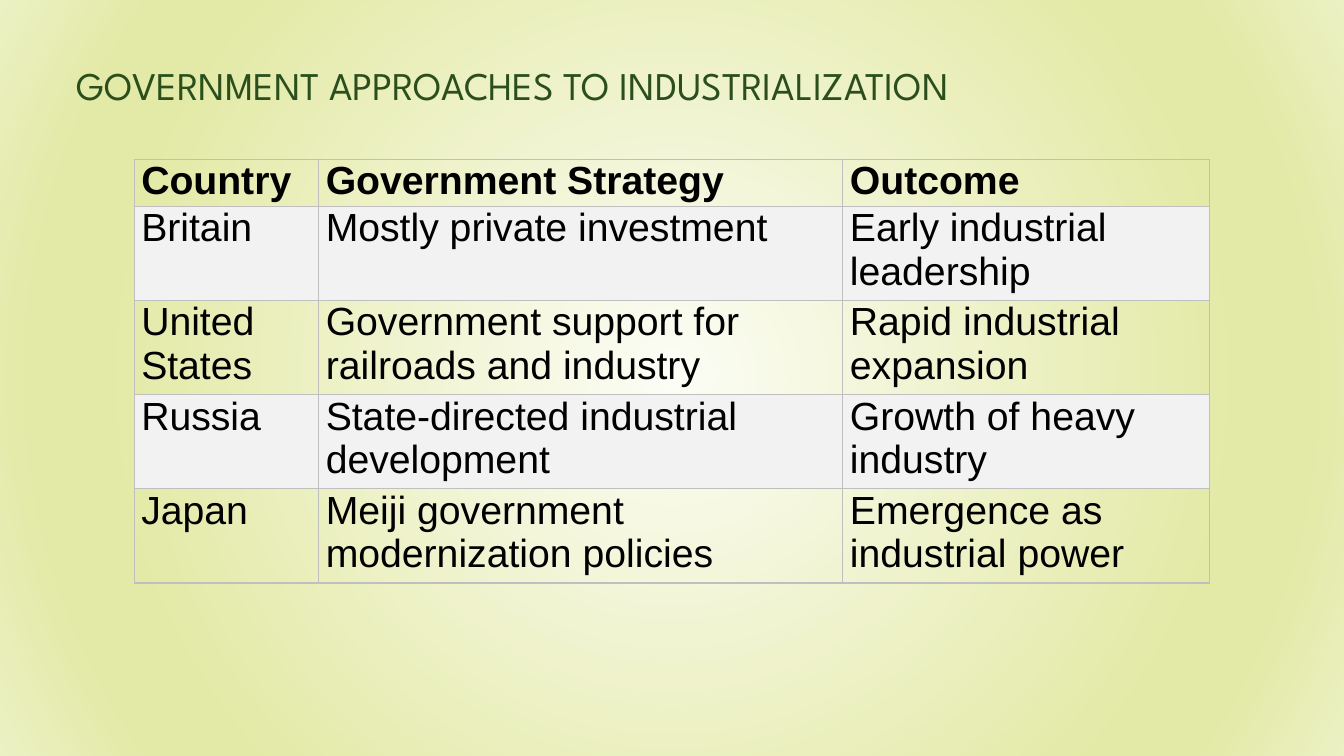
from lxml import etree
from pptx import Presentation
from pptx.dml.color import RGBColor
from pptx.enum.text import MSO_ANCHOR
from pptx.oxml import parse_xml
from pptx.oxml.ns import nsdecls, qn
from pptx.util import Cm, Pt

BOTTOM = MSO_ANCHOR.BOTTOM
BACKGROUND_STOPS = [(0, "FCFDF5"), (74, "E3E9A6"), (83, "E3E9A6"), (100, "ECF1C4")]
BORDER_COLOR = "BFBFBF"
BAND_COLOR = "F2F2F2"
COLUMN_SHARES = [4.65, 13.21, 9.25]
LINE_HEIGHT = 1.1
ROWS = [
    ("Country", "Government Strategy", "Outcome"),
    ("Britain", "Mostly private investment", "Early industrial leadership"),
    ("United States", "Government support for railroads and industry", "Rapid industrial expansion"),
    ("Russia", "State-directed industrial development", "Growth of heavy industry"),
    ("Japan", "Meiji government modernization policies", "Emergence as industrial power"),
]


def color(value):
    return RGBColor.from_string(value)


def add_run(paragraph, text, font_name, font_color, bold=False):
    run = paragraph.add_run()
    run.text = text
    run.font.name = font_name
    run.font.size = Pt(28)
    run.font.bold = bold
    run.font.color.rgb = color(font_color)


def paint_background(slide):
    slide.background.fill.gradient()
    gradient = slide.element.find(".//" + qn("a:gradFill"))
    for child in list(gradient):
        gradient.remove(child)
    stops = etree.SubElement(gradient, qn("a:gsLst"))
    for position, value in BACKGROUND_STOPS:
        stop = etree.SubElement(stops, qn("a:gs"), pos=str(position * 1000))
        etree.SubElement(stop, qn("a:srgbClr"), val=value)
    circle = etree.SubElement(gradient, qn("a:path"), path="circle")
    etree.SubElement(circle, qn("a:fillToRect"), l="50000", t="50000", r="50000", b="50000")


def add_title(slide, left, top, width, height):
    shape = slide.shapes.add_textbox(Cm(left), Cm(top), Cm(width), Cm(height))
    frame = shape.text_frame
    frame.word_wrap = True
    frame.vertical_anchor = BOTTOM
    paragraph = frame.paragraphs[0]
    paragraph.line_spacing = 0.9
    add_run(paragraph, "GOVERNMENT APPROACHES TO INDUSTRIALIZATION", "League Spartan", "2A4F1C")


def add_borders(cell):
    properties = cell._tc.get_or_add_tcPr()
    for index, side in enumerate(("lnL", "lnR", "lnT", "lnB")):
        border = parse_xml(
            f'<a:{side} {nsdecls("a")} w="12700"><a:solidFill>'
            f'<a:srgbClr val="{BORDER_COLOR}"/></a:solidFill></a:{side}>'
        )
        properties.insert(index, border)


def fill_cell(cell, text, header, banded):
    cell.margin_left = cell.margin_right = Cm(0.18)
    cell.margin_top = cell.margin_bottom = 0
    if banded:
        cell.fill.solid()
        cell.fill.fore_color.rgb = color(BAND_COLOR)
    else:
        cell.fill.background()
    add_borders(cell)
    add_run(cell.text_frame.paragraphs[0], text, "Arial", "000000", header)


def add_strategy_table(slide, left, top, width):
    height = LINE_HEIGHT * (2 * len(ROWS) - 1)
    frame = slide.shapes.add_table(
        len(ROWS), len(COLUMN_SHARES), Cm(left), Cm(top), Cm(width), Cm(height)
    )
    table = frame.table
    table.horz_banding = False
    for column, share in zip(table.columns, COLUMN_SHARES):
        column.width = Cm(width * share / sum(COLUMN_SHARES))
    for row_index, texts in enumerate(ROWS):
        header = row_index == 0
        table.rows[row_index].height = Cm(LINE_HEIGHT if header else 2 * LINE_HEIGHT)
        for column_index, text in enumerate(texts):
            fill_cell(table.cell(row_index, column_index), text, header, row_index % 2 == 1)


def main():
    presentation = Presentation()
    presentation.slide_width = Cm(33.87)
    presentation.slide_height = Cm(19.05)
    slide = presentation.slides.add_slide(presentation.slide_layouts[6])
    paint_background(slide)
    add_title(slide, 1.68, 0.64, 29.64, 2.24)
    add_strategy_table(slide, 3.38, 4.01, 27.11)
    presentation.save("out.pptx")


if __name__ == "__main__":
    main()
